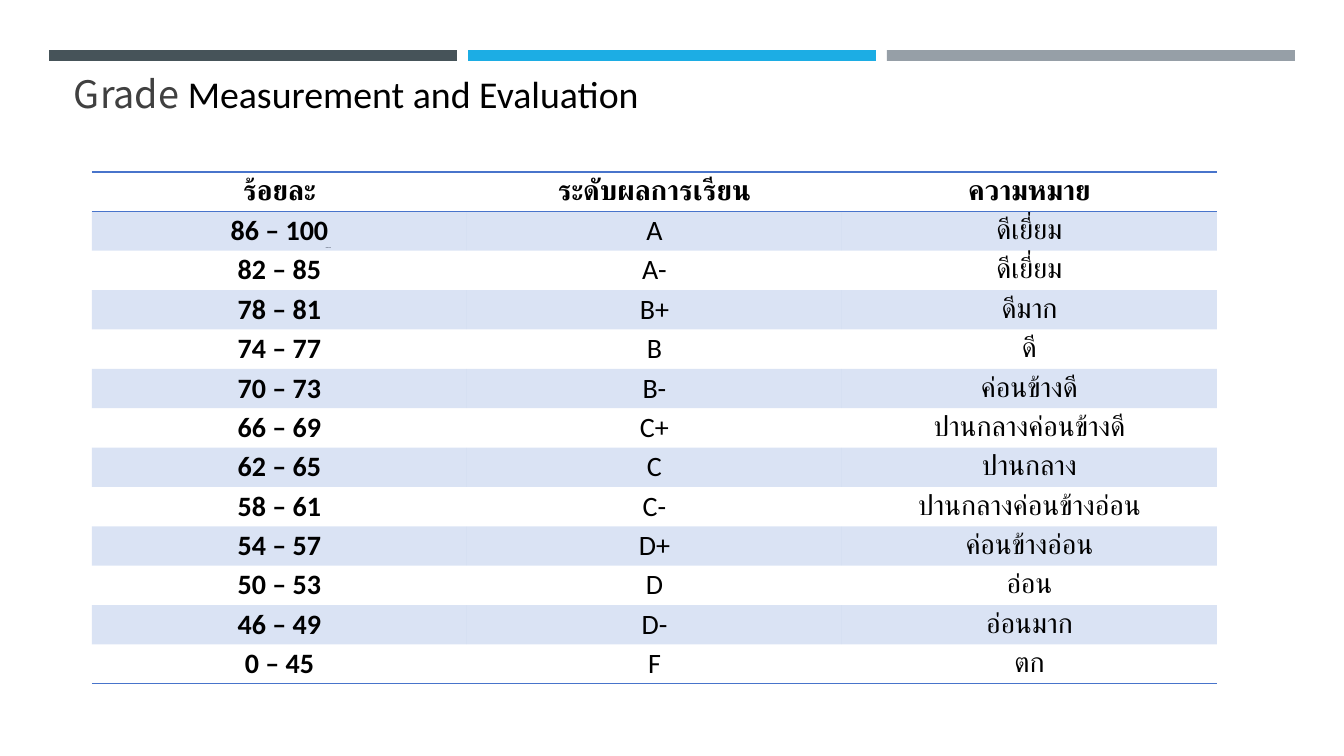
"""Build the grade table slide."""
import dataclasses

import lxml.etree
import pptx
import pptx.dml.color
import pptx.enum.shapes
import pptx.enum.text
import pptx.oxml
import pptx.oxml.ns
import pptx.util

SCALE = 914400 / 100.8
PLAIN = "{2D5ABB26-0587-4C30-8999-92F81FD0307C}"
HEADS = ["ร้อยละ", "ระดับผลการเรียน", "ความหมาย"]
GRADES = [
    ("86 – 100", "A", "ดีเยี่ยม"),
    ("82 – 85", "A-", "ดีเยี่ยม"),
    ("78 – 81", "B+", "ดีมาก"),
    ("74 – 77", "B", "ดี"),
    ("70 – 73", "B-", "ค่อนข้างดี"),
    ("66 – 69", "C+", "ปานกลางค่อนข้างดี"),
    ("62 – 65", "C", "ปานกลาง"),
    ("58 – 61", "C-", "ปานกลางค่อนข้างอ่อน"),
    ("54 – 57", "D+", "ค่อนข้างอ่อน"),
    ("50 – 53", "D", "อ่อน"),
    ("46 – 49", "D-", "อ่อนมาก"),
    ("0 – 45", "F", "ตก"),
]


@dataclasses.dataclass(frozen=True)
class Theme:
    """Hold the colours, fonts and type sizes."""
    ink: str = "000000"
    grey: str = "404040"
    blue: str = "4874CB"
    bars: tuple = ("465359", "1CADE4", "969FA7")
    body: str = "Calibri"
    lead: str = "Noto Sans CJK SC"
    code: str = "Arial"
    title: int = 27
    cell: int = 20
    tiny: int = 1


THEME = Theme()


def px(count):
    """Turn pixels into EMU."""
    return pptx.util.Emu(round(count * SCALE))


def tint(text):
    """Make a colour from a hex string."""
    return pptx.dml.color.RGBColor.from_string(text)


def style(run, size, face, hue, bold=False):
    """Format one run."""
    font = run.font
    font.size = pptx.util.Pt(size)
    font.name = face
    font.bold = bold
    font.color.rgb = tint(hue)


def add_text(slide, box, parts, size, lead):
    """Add a text box of one line made of styled parts."""
    frame = slide.shapes.add_textbox(*map(px, box)).text_frame
    frame.word_wrap = True
    frame.margin_left = frame.margin_right = 0
    frame.margin_top = frame.margin_bottom = 0
    line = frame.paragraphs[0]
    line.line_spacing = lead
    for text, face, hue in parts:
        run = line.add_run()
        run.text = text
        style(run, size, face, hue)


def add_bar(slide, box, hue):
    """Add a plain filled bar."""
    bar = slide.shapes.add_shape(
        pptx.enum.shapes.MSO_SHAPE.RECTANGLE, *map(px, box))
    bar.shadow.inherit = False
    bar.fill.solid()
    bar.fill.fore_color.rgb = tint(hue)
    bar.line.fill.background()


def fill_cell(cell, text, bold, shade):
    """Write a centred cell and shade it if asked."""
    cell.margin_left = cell.margin_right = px(7)
    cell.margin_top = cell.margin_bottom = 0
    cell.vertical_anchor = pptx.enum.text.MSO_ANCHOR.MIDDLE
    cell.text_frame.text = text
    line = cell.text_frame.paragraphs[0]
    line.alignment = pptx.enum.text.PP_ALIGN.CENTER
    style(line.runs[0], THEME.cell, THEME.body, THEME.ink, bold)
    if not shade:
        cell.fill.background()
        return
    cell.fill.solid()
    cell.fill.fore_color.rgb = tint(THEME.blue)
    name = pptx.oxml.ns.qn("a:srgbClr")
    for hue in cell._tc.tcPr.iter(name):
        lxml.etree.SubElement(hue, pptx.oxml.ns.qn("a:alpha"), val="20000")


def rule_cell(cell, sides):
    """Draw a one point border on each named side."""
    for spot, side in enumerate(sides):
        edge = pptx.oxml.parse_xml(
            f'<a:ln{side} {pptx.oxml.ns.nsdecls("a")} w="12700"><a:solidFill>'
            f'<a:srgbClr val="{THEME.blue}"/></a:solidFill></a:ln{side}>')
        cell._tc.get_or_add_tcPr().insert(spot, edge)


def add_grid(slide, box, rows):
    """Add the banded table with rules round the head and at the foot."""
    high = box[3]
    count = len(rows)
    grid = slide.shapes.add_table(count, len(HEADS), *map(px, box)).table
    grid.first_row = grid.horz_banding = False
    grid._tbl.tblPr.find(pptx.oxml.ns.qn("a:tableStyleId")).text = PLAIN
    for column in grid.columns:
        column.width = px(box[2] // len(HEADS))
    for i, texts in enumerate(rows):
        grid.rows[i].height = px(high / count)
        sides = {0: "TB", count - 1: "B"}.get(i, "")
        for j, text in enumerate(texts):
            cell = grid.cell(i, j)
            fill_cell(cell, text, i == 0 or j == 0, i % 2 == 1)
            rule_cell(cell, sides)


def main():
    """Build and save the slide."""
    deck = pptx.Presentation()
    deck.slide_width, deck.slide_height = px(1344), px(756)
    slide = deck.slides.add_slide(deck.slide_layouts[6])
    add_text(slide, (326, 247, 466, 390),
             [("IBB2402", THEME.code, THEME.ink)], THEME.tiny, 0.92)
    add_text(slide, (74, 80, 1018, 53),
             [("Grade ", THEME.lead, THEME.grey),
              ("Measurement and Evaluation", THEME.body, THEME.ink)],
             THEME.title, 0.78)
    for i, hue in enumerate(THEME.bars):
        add_bar(slide, (49 + 419 * i, 50, 408, 11), hue)
    add_grid(slide, (92, 172, 1125, 512), [HEADS, *GRADES])
    deck.save("out.pptx")


if __name__ == "__main__":
    main()
